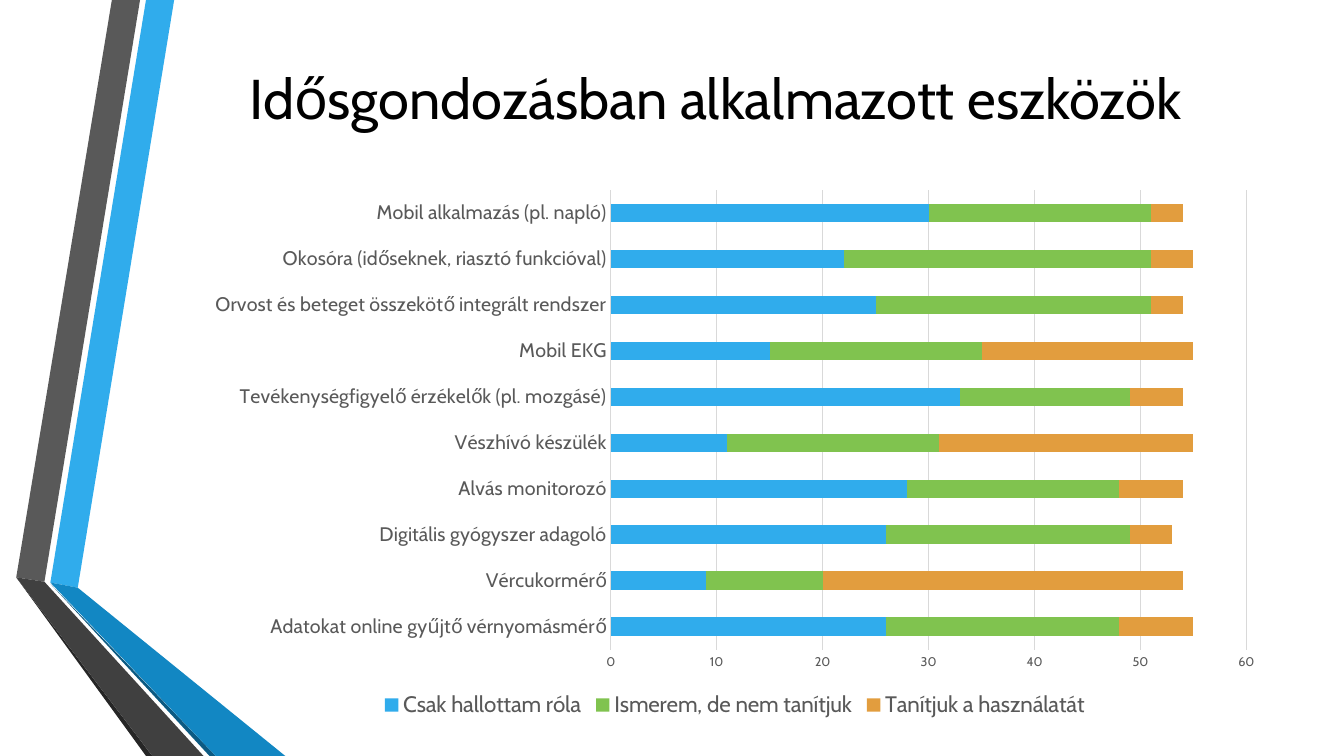
from pptx import Presentation
from pptx.chart.data import CategoryChartData
from pptx.dml.color import RGBColor
from pptx.enum.chart import XL_CHART_TYPE as ChartType
from pptx.enum.chart import XL_LEGEND_POSITION as LegendPosition
from pptx.enum.chart import XL_TICK_MARK as TickMark
from pptx.enum.text import MSO_ANCHOR as Anchor
from pptx.enum.text import PP_ALIGN as Align
from pptx.util import Cm, Pt

FONT = "Cabin"
COLORS = {
    "black": "000000", "text": "595959", "grid": "D9D9D9",
    "blue": "30ACEC", "green": "80C34F", "orange": "E29D3E",
    "blue_lower": "1287C3", "blue_edge": "0C5A82",
    "grey": "595959", "grey_lower": "404040", "grey_edge": "262626",
}
TITLE = "Idősgondozásban alkalmazott eszközök"
DEVICES = [
    ("Adatokat online gyűjtő vérnyomásmérő", 26, 22, 7),
    ("Vércukormérő", 9, 11, 34),
    ("Digitális gyógyszer adagoló", 26, 23, 4),
    ("Alvás monitorozó", 28, 20, 6),
    ("Vészhívó készülék", 11, 20, 24),
    ("Tevékenységfigyelő érzékelők (pl. mozgásé)", 33, 16, 5),
    ("Mobil EKG", 15, 20, 20),
    ("Orvost és beteget összekötő integrált rendszer", 25, 26, 3),
    ("Okosóra (időseknek, riasztó funkcióval)", 22, 29, 4),
    ("Mobil alkalmazás (pl. napló)", 30, 21, 3),
]
ANSWERS = [
    ("Csak hallottam róla", "blue"),
    ("Ismerem, de nem tanítjuk", "green"),
    ("Tanítjuk a használatát", "orange"),
]
RIBBONS = [
    ("blue", [(1.27, 14.68), (1.96, 14.81), (4.39, 0), (3.68, 0)]),
    ("grey", [(3.53, 0), (2.82, 0), (0.41, 14.55), (1.12, 14.66)]),
    ("grey_edge", [(0.41, 14.55), (3.68, 19.05), (3.84, 19.05)]),
    ("blue_edge", [(1.27, 14.71), (5.28, 19.05), (5.44, 19.05)]),
    ("blue_lower", [(1.27, 14.68), (5.44, 19.05), (7.19, 19.05), (1.96, 14.81)]),
    ("grey_lower", [(5.13, 19.05), (1.12, 14.66), (0.41, 14.55), (3.84, 19.05)]),
]


def color(name):
    return RGBColor.from_string(COLORS[name])


def style_font(font, size, name):
    font.name = FONT
    font.size = Pt(size)
    font.color.rgb = color(name)


def style_line(line):
    line.color.rgb = color("grid")
    line.width = Pt(0.75)


def add_ribbon(page, name, corners):
    points = [(Cm(x), Cm(y)) for x, y in corners]
    builder = page.shapes.build_freeform(*points[0])
    builder.add_line_segments(points[1:], close=True)
    ribbon = builder.convert_to_shape()
    ribbon.shadow.inherit = False
    ribbon.fill.solid()
    ribbon.fill.fore_color.rgb = color(name)
    ribbon.line.fill.background()


def add_title(page):
    title = page.shapes.title
    title.left, title.top, title.width, title.height = Cm(4.11), Cm(0), Cm(27.84), Cm(4.88)
    frame = title.text_frame
    frame.text = TITLE
    frame.word_wrap = True
    frame.vertical_anchor = Anchor.MIDDLE
    para = frame.paragraphs[0]
    para.alignment = Align.CENTER
    style_font(para.runs[0].font, 40, "black")


def add_device_chart(page):
    data = CategoryChartData(number_format="General")
    data.categories = [device[0] for device in DEVICES]
    for column, (answer, _) in enumerate(ANSWERS, start=1):
        data.add_series(answer, [device[column] for device in DEVICES])
    chart = page.shapes.add_chart(
        ChartType.BAR_STACKED, Cm(4.88), Cm(4.52), Cm(27.28), Cm(13.69), data
    ).chart
    style_font(chart.font, 10, "black")
    chart.has_title = False
    chart.has_legend = True
    chart.legend.position = LegendPosition.BOTTOM
    chart.legend.include_in_layout = False
    style_font(chart.legend.font, 16, "text")

    plot = chart.plots[0]
    plot.gap_width = 150
    plot.overlap = 100
    plot.vary_by_categories = False
    for series, (_, name) in zip(plot.series, ANSWERS):
        series.format.fill.solid()
        series.format.fill.fore_color.rgb = color(name)

    for axis, size in ((chart.category_axis, 14), (chart.value_axis, 9)):
        axis.major_tick_mark = axis.minor_tick_mark = TickMark.NONE
        style_font(axis.tick_labels.font, size, "text")
    style_line(chart.category_axis.format.line)
    values = chart.value_axis
    values.minimum_scale, values.maximum_scale, values.major_unit = 0, 60, 10
    values.format.line.fill.background()
    values.has_major_gridlines = True
    style_line(values.major_gridlines.format.line)


def main():
    deck = Presentation()
    deck.slide_width, deck.slide_height = Cm(33.87), Cm(19.05)
    page = deck.slides.add_slide(deck.slide_layouts[5])
    for name, corners in RIBBONS:
        add_ribbon(page, name, corners)
    add_title(page)
    add_device_chart(page)
    deck.save("out.pptx")


if __name__ == "__main__":
    main()
